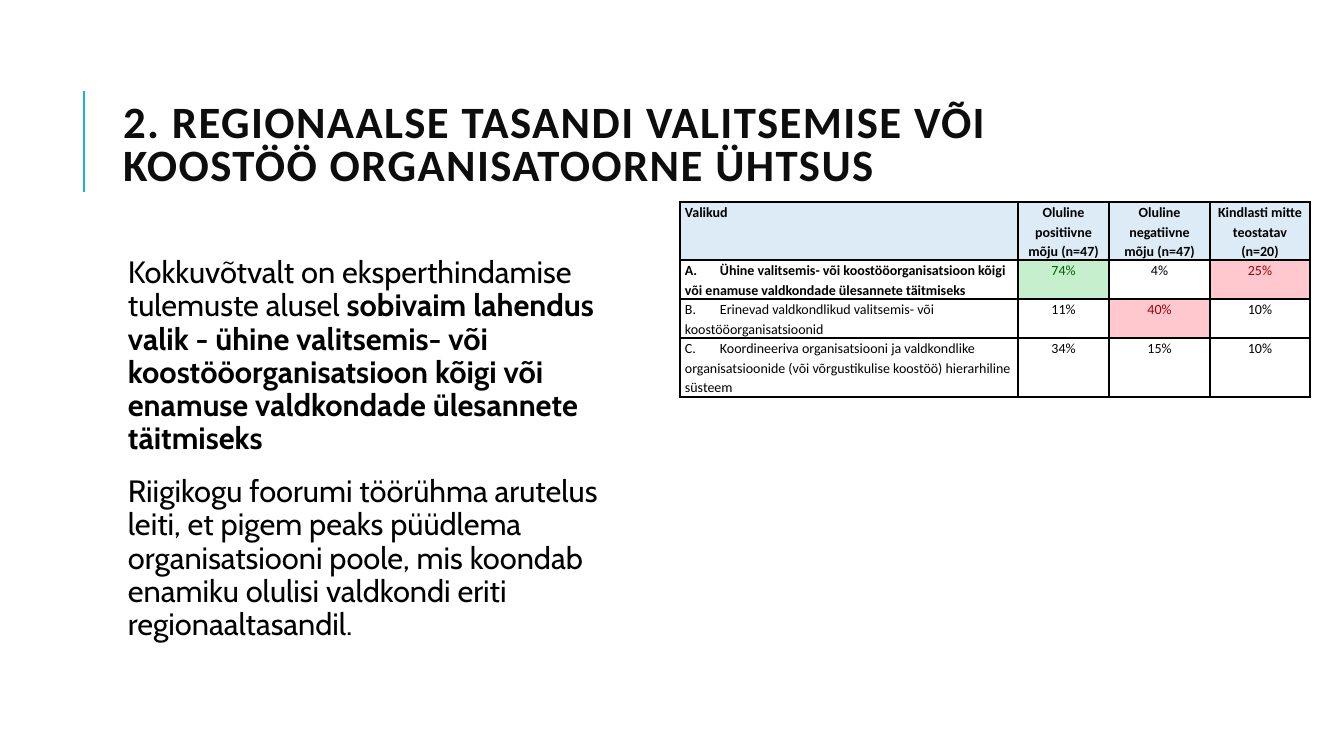
import pptx
import pptx.util
import pptx.dml.color
import pptx.enum.shapes
import pptx.enum.text
import pptx.oxml.ns
from lxml import etree

TITLE = "2. REGIONAALSE TASANDI VALITSEMISE VÕI KOOSTÖÖ ORGANISATOORNE ÜHTSUS"
# Each paragraph is a list of (text, bold) runs
BODY = [
    [("Kokkuvõtvalt on eksperthindamise tulemuste alusel ", False),
     ("sobivaim lahendus valik - ühine valitsemis- või koostööorganisatsioon "
      "kõigi või enamuse valdkondade ülesannete täitmiseks", True)],
    [("Riigikogu foorumi töörühma arutelus leiti, et pigem peaks püüdlema "
      "organisatsiooni poole, mis koondab enamiku olulisi valdkondi eriti "
      "regionaaltasandil.", False)],
]
OPTIONS = [
    ["Valikud", "Oluline positiivne mõju (n=47)", "Oluline negatiivne mõju (n=47)",
     "Kindlasti mitte teostatav (n=20)"],
    ["A.\tÜhine valitsemis- või koostööorganisatsioon kõigi või enamuse "
     "valdkondade ülesannete täitmiseks", "74%", "4%", "25%"],
    ["B.\tErinevad valdkondlikud valitsemis- või koostööorganisatsioonid",
     "11%", "40%", "10%"],
    ["C.\tKoordineeriva organisatsiooni ja valdkondlike organisatsioonide "
     "(või võrgustikulise koostöö) hierarhiline süsteem", "34%", "15%", "10%"],
]
COLORS = {
    "accent": "1CADE4", "title": "0D0D0D", "text": "000000", "header": "DDEBF7",
    "good": "C6EFCE", "good_text": "006100", "bad": "FFC7CE", "bad_text": "9C0006",
}
HIGHLIGHTS = {(1, 1): "good", (1, 3): "bad", (2, 2): "bad"}
BOLD_CELLS = {(0, 0), (0, 1), (0, 2), (0, 3), (1, 0)}

COLUMN_WIDTHS = [338, 91, 101, 100]
ROW_HEIGHTS = [58, 39, 39, 59]
LETTER_TAB = 35
PX_PER_INCH = 100.8


def px(length):
    return pptx.util.Emu(round(length * 914400 / PX_PER_INCH))


def rgb(name):
    return pptx.dml.color.RGBColor.from_string(COLORS[name])


def set_font(font, name, size, color, bold=None):
    font.name = name
    font.size = pptx.util.Pt(size)
    font.color.rgb = rgb(color)
    font.bold = bold


def add_child(parent, tag, **attributes):
    child = etree.SubElement(parent, pptx.oxml.ns.qn(tag))
    for key, value in attributes.items():
        child.set(key, str(value))
    return child


def add_title(slide):
    title = slide.shapes.title
    title.left, title.top, title.width, title.height = px(113), px(65), px(1072), px(165)
    frame = title.text_frame
    frame.text = TITLE
    frame.word_wrap = True
    frame.auto_size = pptx.enum.text.MSO_AUTO_SIZE.NONE
    frame.vertical_anchor = pptx.enum.text.MSO_ANCHOR.MIDDLE
    paragraph = frame.paragraphs[0]
    paragraph.alignment = pptx.enum.text.PP_ALIGN.LEFT
    paragraph.line_spacing = 0.8
    set_font(paragraph.font, "Calibri", 32, "title", True)
    paragraph.runs[0].font._element.set("spc", "100")


def add_title_rule(slide):
    rule = slide.shapes.add_connector(
        pptx.enum.shapes.MSO_CONNECTOR.STRAIGHT, px(84), px(192), px(84), px(91))
    rule.line.color.rgb = rgb("accent")
    rule.line.width = pptx.util.Pt(1.5)
    add_child(rule._element.spPr, "a:effectLst")


def add_body(slide):
    box = slide.shapes.add_textbox(px(113), px(252), px(524), px(444))
    frame = box.text_frame
    frame.word_wrap = True
    frame.margin_left = frame.margin_right = frame.margin_top = frame.margin_bottom = px(5)
    for index, runs in enumerate(BODY):
        paragraph = frame.paragraphs[0] if index == 0 else frame.add_paragraph()
        paragraph.line_spacing = 0.9
        paragraph.space_before = pptx.util.Pt(12)
        paragraph.space_after = pptx.util.Pt(2)
        paragraph._p.get_or_add_pPr().set("marL", str(px(10)))
        set_font(paragraph.font, "Cabin", 22, "text")
        for text, bold in runs:
            run = paragraph.add_run()
            run.text = text
            run.font.bold = bold


def add_borders(cell):
    properties = cell._tc.get_or_add_tcPr()
    for side in ("a:lnL", "a:lnR", "a:lnT", "a:lnB"):
        line = add_child(properties, side, w=pptx.util.Pt(1))
        add_child(add_child(line, "a:solidFill"), "a:srgbClr", val=COLORS["text"])


def format_cell(cell, row, column):
    cell.text = OPTIONS[row][column]
    cell.margin_left = cell.margin_right = px(5)
    cell.margin_top = cell.margin_bottom = 0
    add_borders(cell)
    highlight = HIGHLIGHTS.get((row, column))
    fill = "header" if row == 0 else highlight
    if fill:
        cell.fill.solid()
        cell.fill.fore_color.rgb = rgb(fill)
    else:
        cell.fill.background()
    paragraph = cell.text_frame.paragraphs[0]
    paragraph.line_spacing = 1.15
    color = f"{highlight}_text" if highlight else "text"
    set_font(paragraph.font, "Calibri", 10, color, (row, column) in BOLD_CELLS)
    if column > 0:
        paragraph.alignment = pptx.enum.text.PP_ALIGN.CENTER
    elif row > 0:
        tabs = etree.Element(pptx.oxml.ns.qn("a:tabLst"))
        add_child(tabs, "a:tab", pos=px(LETTER_TAB), algn="l")
        paragraph._p.get_or_add_pPr().find(pptx.oxml.ns.qn("a:defRPr")).addprevious(tabs)


def add_options_table(slide):
    table = slide.shapes.add_table(
        len(ROW_HEIGHTS), len(COLUMN_WIDTHS), px(680), px(202),
        px(sum(COLUMN_WIDTHS)), px(sum(ROW_HEIGHTS))).table
    table.first_row = table.horz_banding = False
    for column, width in zip(table.columns, COLUMN_WIDTHS):
        column.width = px(width)
    for row, height in zip(table.rows, ROW_HEIGHTS):
        row.height = px(height)
    for row in range(len(ROW_HEIGHTS)):
        for column in range(len(COLUMN_WIDTHS)):
            format_cell(table.cell(row, column), row, column)


def main():
    presentation = pptx.Presentation()
    presentation.slide_width, presentation.slide_height = px(1344), px(756)
    slide = presentation.slides.add_slide(presentation.slide_layouts[5])
    add_title_rule(slide)
    add_title(slide)
    add_body(slide)
    add_options_table(slide)
    presentation.save("out.pptx")


if __name__ == "__main__":
    main()
